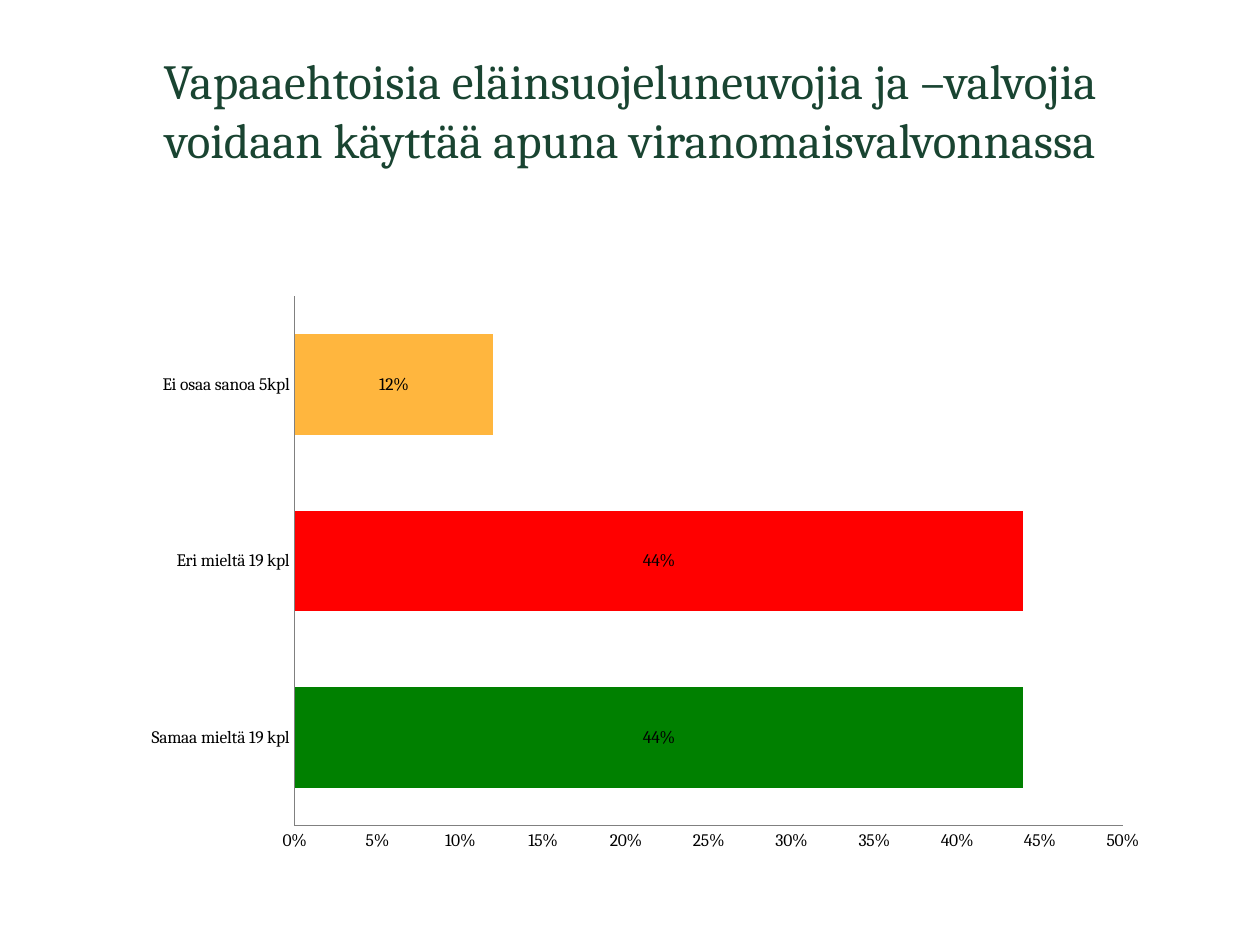
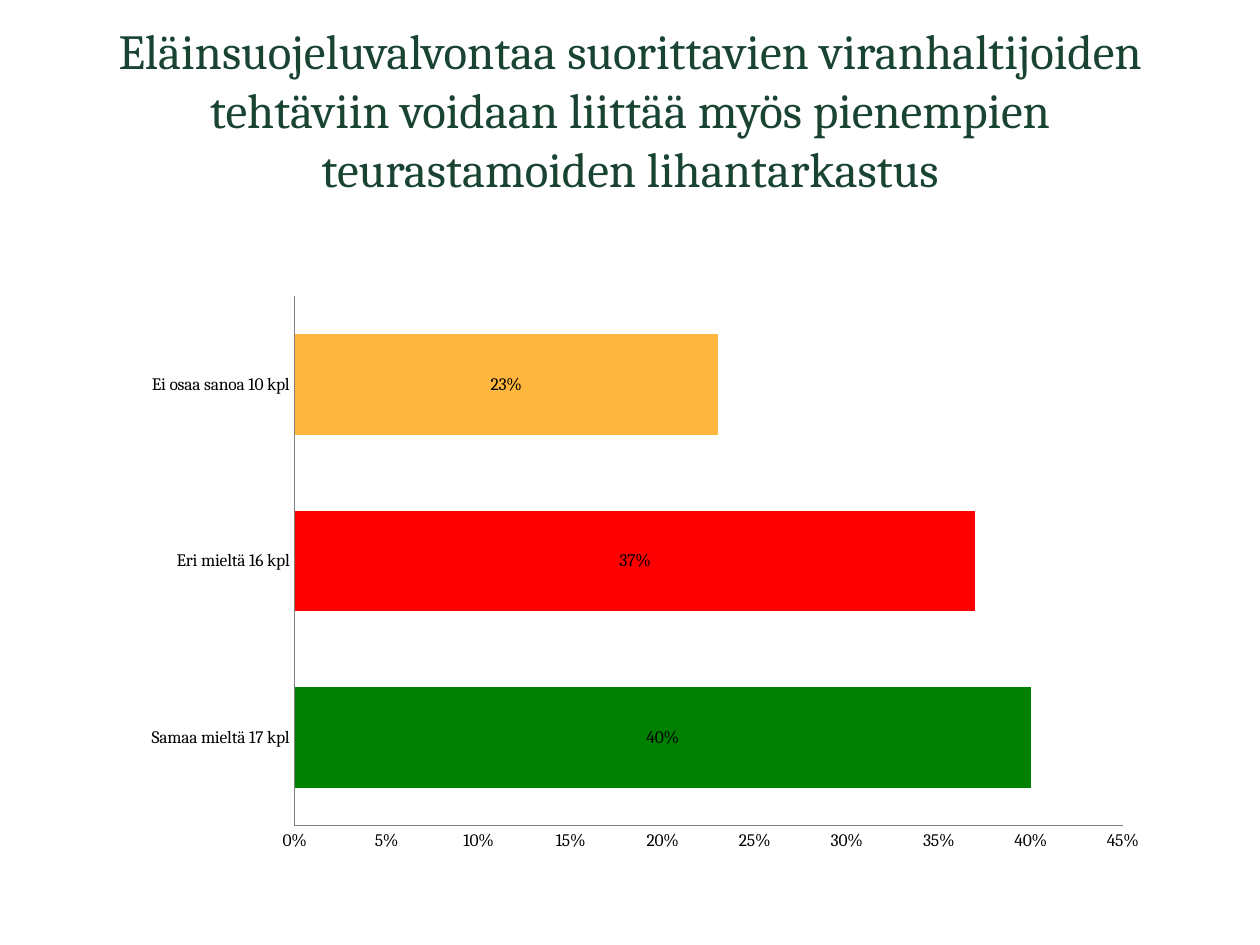
from dataclasses import dataclass

from lxml import etree
from pptx import Presentation
from pptx.chart.data import CategoryChartData
from pptx.dml.color import RGBColor
from pptx.enum.chart import XL_CHART_TYPE, XL_LABEL_POSITION, XL_TICK_MARK
from pptx.enum.text import MSO_ANCHOR, PP_ALIGN
from pptx.oxml.ns import qn
from pptx.slide import Slide
from pptx.util import Inches, Pt

BAR_STACKED = XL_CHART_TYPE.BAR_STACKED
LABEL_CENTER = XL_LABEL_POSITION.CENTER
NO_TICK = XL_TICK_MARK.NONE
MIDDLE = MSO_ANCHOR.MIDDLE
CENTER = PP_ALIGN.CENTER

SLIDE_W = Inches(10)
SLIDE_H = Inches(7.5)
COLUMNS, ROWS = 100, 75
PERCENT = "0%"


@dataclass(frozen=True)
class Theme:
    font: str = "Cambria"
    title_size: float = 28
    chart_size: float = 10
    title: str = "194431"
    text: str = "000000"
    axis: str = "808080"
    series: str = "F8C000"
    agree: str = "008000"
    disagree: str = "FF0000"
    unsure: str = "FFB63E"


@dataclass(frozen=True)
class Area:
    col: float
    row: float
    cols: float
    rows: float

    def box(self) -> tuple[int, int, int, int]:
        w, h = SLIDE_W / COLUMNS, SLIDE_H / ROWS
        return (round(self.col * w), round(self.row * h),
                round(self.cols * w), round(self.rows * h))


@dataclass(frozen=True)
class Answer:
    label: str
    share: float
    color: str


@dataclass(frozen=True)
class Question:
    title: str
    axis_max: float
    answers: tuple[Answer, ...]


THEME = Theme()
TITLE_AREA = Area(8.4, 0.9, 83.2, 15.5)
CHART_AREA = Area(8.4, 22.6, 83.2, 45.7)
PLOT_SHARES = {"x": 0.18, "y": 0.02, "w": 0.79, "h": 0.92}

QUESTIONS = (
    Question(
        "Vapaaehtoisia eläinsuojeluneuvojia ja –valvojia voidaan käyttää "
        "apuna viranomaisvalvonnassa",
        0.5,
        (Answer("Samaa mieltä 19 kpl", 0.44, THEME.agree),
         Answer("Eri mieltä 19 kpl", 0.44, THEME.disagree),
         Answer("Ei osaa sanoa 5kpl", 0.12, THEME.unsure)),
    ),
    Question(
        "Eläinsuojeluvalvontaa suorittavien viranhaltijoiden tehtäviin voidaan "
        "liittää myös pienempien teurastamoiden lihantarkastus",
        0.45,
        (Answer("Samaa mieltä 17 kpl", 0.4, THEME.agree),
         Answer("Eri mieltä 16 kpl", 0.37, THEME.disagree),
         Answer("Ei osaa sanoa 10 kpl", 0.23, THEME.unsure)),
    ),
)


def rgb(color: str) -> RGBColor:
    return RGBColor.from_string(color)


def style_font(font, size: float, color: str) -> None:
    font.name = THEME.font
    font.size = Pt(size)
    font.color.rgb = rgb(color)


def paint(fmt, color: str) -> None:
    fmt.fill.solid()
    fmt.fill.fore_color.rgb = rgb(color)


def add_title(s: Slide, text: str) -> None:
    tf = s.shapes.add_textbox(*TITLE_AREA.box()).text_frame
    tf.word_wrap = True
    tf.vertical_anchor = MIDDLE
    tf.margin_left = tf.margin_right = Inches(0.05)
    tf.text = text
    p = tf.paragraphs[0]
    p.alignment = CENTER
    style_font(p.runs[0].font, THEME.title_size, THEME.title)


def place_plot(chart) -> None:
    area = chart.element.find(".//" + qn("c:plotArea"))
    for old in area.findall(qn("c:layout")):
        area.remove(old)
    layout = etree.Element(qn("c:layout"))
    manual = etree.SubElement(layout, qn("c:manualLayout"))
    settings = {"layoutTarget": "inner", "xMode": "edge", "yMode": "edge", **PLOT_SHARES}
    for tag, val in settings.items():
        etree.SubElement(manual, qn(f"c:{tag}")).set("val", str(val))
    area.insert(0, layout)


def style_axis(axis) -> None:
    axis.has_major_gridlines = False
    axis.major_tick_mark = axis.minor_tick_mark = NO_TICK
    axis.format.line.color.rgb = rgb(THEME.axis)
    axis.format.line.width = Pt(0.75)


def add_answer_chart(s: Slide, question: Question) -> None:
    data = CategoryChartData(number_format=PERCENT)
    data.categories = [a.label for a in question.answers]
    data.add_series("Series 1", [a.share for a in question.answers])
    chart = s.shapes.add_chart(BAR_STACKED, *CHART_AREA.box(), data).chart
    chart.has_legend = False
    chart.has_title = False
    style_font(chart.font, THEME.chart_size, THEME.text)
    place_plot(chart)

    style_axis(chart.category_axis)
    values = chart.value_axis
    style_axis(values)
    values.minimum_scale = 0
    values.maximum_scale = question.axis_max
    values.major_unit = 0.05
    values.tick_labels.number_format = PERCENT
    values.tick_labels.number_format_is_linked = False

    plot = chart.plots[0]
    plot.gap_width = 75
    plot.overlap = 100
    plot.vary_by_categories = False
    series = plot.series[0]
    paint(series.format, THEME.series)
    for i, answer in enumerate(question.answers):
        paint(series.points[i].format, answer.color)

    labels = series.data_labels
    labels.show_value = True
    labels.number_format = PERCENT
    labels.number_format_is_linked = False
    labels.position = LABEL_CENTER
    style_font(labels.font, THEME.chart_size, THEME.text)


def main() -> None:
    prs = Presentation()
    prs.slide_width, prs.slide_height = SLIDE_W, SLIDE_H
    blank = prs.slide_layouts[6]
    for question in QUESTIONS:
        s = prs.slides.add_slide(blank)
        add_title(s, question.title)
        add_answer_chart(s, question)
    prs.save("out.pptx")


if __name__ == "__main__":
    main()
